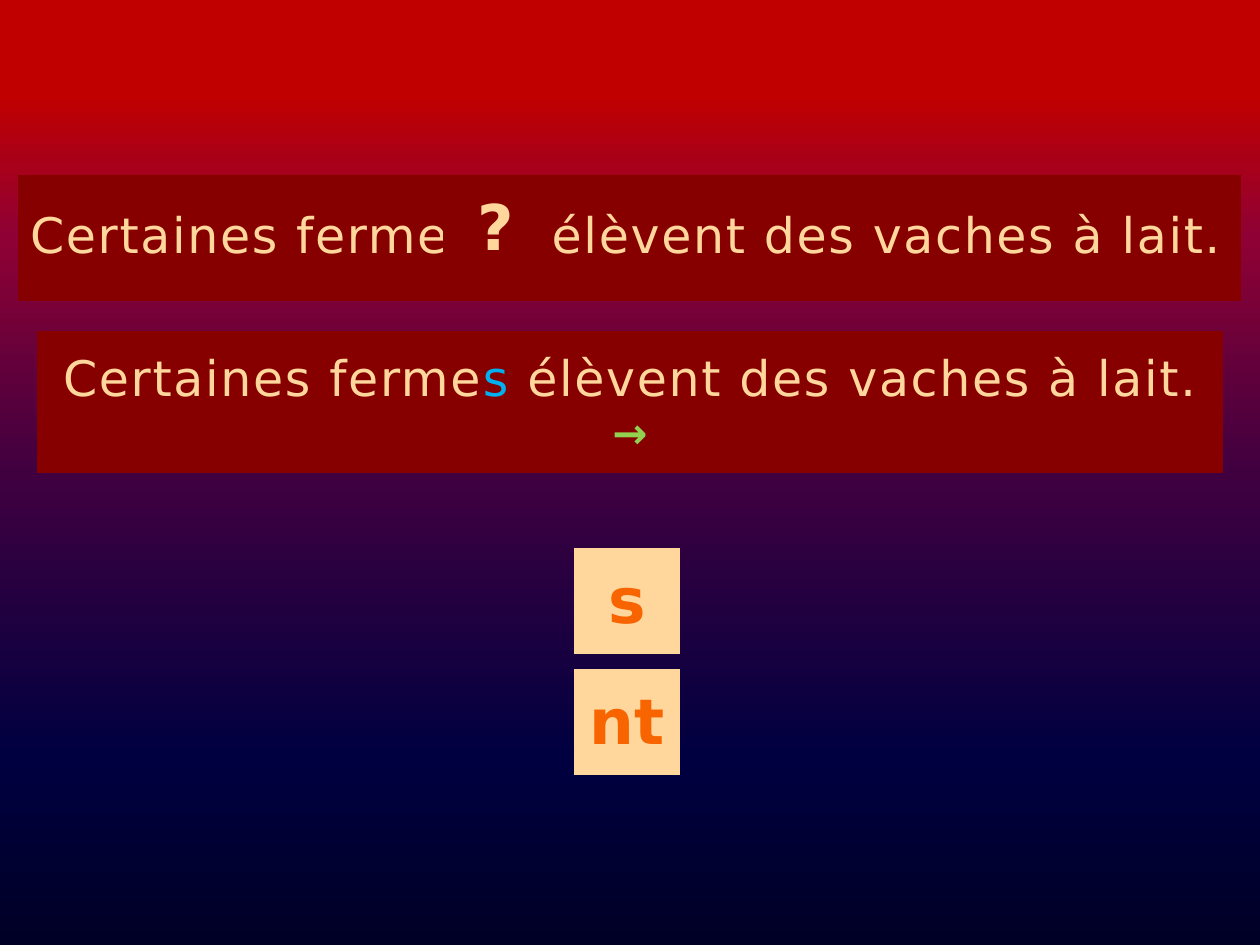
from lxml import etree
from pptx import Presentation
from pptx.dml.color import RGBColor
from pptx.enum.shapes import MSO_SHAPE as Shape
from pptx.enum.text import MSO_ANCHOR as Anchor, PP_ALIGN as Align
from pptx.oxml.ns import qn
from pptx.util import Inches, Pt

CREAM = RGBColor(0xFF, 0xD7, 0x9D)
MAROON = RGBColor(0x86, 0x00, 0x00)
ORANGE = RGBColor(0xF8, 0x64, 0x00)
BLUE = RGBColor(0x00, 0xB0, 0xF0)
GREEN = RGBColor(0x92, 0xD0, 0x50)
BACKDROP_STOPS = [(0, "000026"), (20, "000040"), (50, "400040"), (75, "8F0134"), (90, "C00000")]


class GrammarSlide:
    font_name = "DejaVu Sans"
    sentence_size = 28
    letter_size = 36

    def __init__(self, presentation):
        self.slide = presentation.slides.add_slide(presentation.slide_layouts[6])

    def panel(self, left, top, width, height, fill=None):
        shape = self.slide.shapes.add_shape(
            Shape.ACTION_BUTTON_CUSTOM, Inches(left), Inches(top), Inches(width), Inches(height))
        shape.shadow.inherit = False
        shape.line.fill.background()
        if fill is not None:
            shape.fill.solid()
            shape.fill.fore_color.rgb = fill
        return shape

    def backdrop(self, width, height, stops):
        """Cover the slide with a gradient that runs from bottom to top."""
        shape = self.panel(0, 0, width, height)
        shape.fill.gradient()
        shape.fill.gradient_angle = 90
        stop_list = shape.element.spPr.find(qn("a:gradFill")).find(qn("a:gsLst"))
        for stop in list(stop_list):
            stop_list.remove(stop)
        for percent, colour in stops:
            stop = etree.SubElement(stop_list, qn("a:gs"), pos=str(percent * 1000))
            etree.SubElement(stop, qn("a:srgbClr"), val=colour)

    def text_frame(self, shape, top_inset, bottom_inset, wrap=False):
        frame = shape.text_frame
        frame.word_wrap = wrap
        frame.vertical_anchor = Anchor.MIDDLE
        frame.margin_top, frame.margin_bottom = Inches(top_inset), Inches(bottom_inset)
        return frame

    def set_text(self, paragraph, pieces, size, colour, bold=False, spacing=0, align=Align.CENTER):
        """Fill a paragraph with (text, own colour or None) pieces; spacing is in points."""
        paragraph.alignment = align
        font = paragraph.font
        font.name, font.size, font.bold = self.font_name, Pt(size), bold
        font.color.rgb = colour
        paragraph._p.pPr.find(qn("a:defRPr")).set("spc", str(spacing * 100))
        for text, own_colour in pieces:
            run = paragraph.add_run()
            run.text = text
            if own_colour is not None:
                run.font.color.rgb = own_colour

    def letter_tile(self, letters, left, top, width, height, fill, colour):
        frame = self.text_frame(self.panel(left, top, width, height, fill), 0.04, 0.08)
        self.set_text(frame.paragraphs[0], [(letters, None)], self.letter_size, colour, bold=True)

    def gap_sentence(self, before, after, tab):
        """Add a sentence whose second part starts at a tab stop, leaving a gap."""
        frame = self.text_frame(self.panel(0.14, 1.39, 9.71, 1, MAROON), 0.02, 0.08, wrap=True)
        frame.margin_right = 0
        sentence = frame.paragraphs[0]
        self.set_text(sentence, [(f"{before}\t{after}", None)], self.sentence_size, CREAM,
                      spacing=1, align=Align.LEFT)
        tabs = etree.Element(qn("a:tabLst"))
        etree.SubElement(tabs, qn("a:tab"), pos=str(Inches(tab)), algn="l")
        sentence._p.pPr.find(qn("a:defRPr")).addprevious(tabs)

    def answer(self, pieces):
        frame = self.text_frame(self.panel(0.29, 2.63, 9.42, 1.12, MAROON), 0.04, 0.04)
        self.set_text(frame.paragraphs[0], pieces, self.sentence_size, CREAM, spacing=1)
        arrow = frame.add_paragraph()
        arrow.space_after = Pt(6)
        self.set_text(arrow, [("→", None)], 24, GREEN, bold=True, spacing=1)


def main():
    presentation = Presentation()
    presentation.slide_width, presentation.slide_height = Inches(10), Inches(7.5)
    page = GrammarSlide(presentation)
    page.backdrop(10, 7.5, BACKDROP_STOPS)
    page.gap_sentence("Certaines ferme", "élèvent des vaches à lait.", tab=4.14)
    page.letter_tile("?", 3.52, 1.39, 0.83, 0.84, MAROON, CREAM)
    for row, ending in enumerate(["s", "nt"]):
        page.letter_tile(ending, 4.56, 4.35 + row * 0.96, 0.84, 0.84, CREAM, ORANGE)
    page.answer([("Certaines ferme", None), ("s", BLUE), (" élèvent des vaches à lait.", None)])
    presentation.save("out.pptx")


if __name__ == "__main__":
    main()
